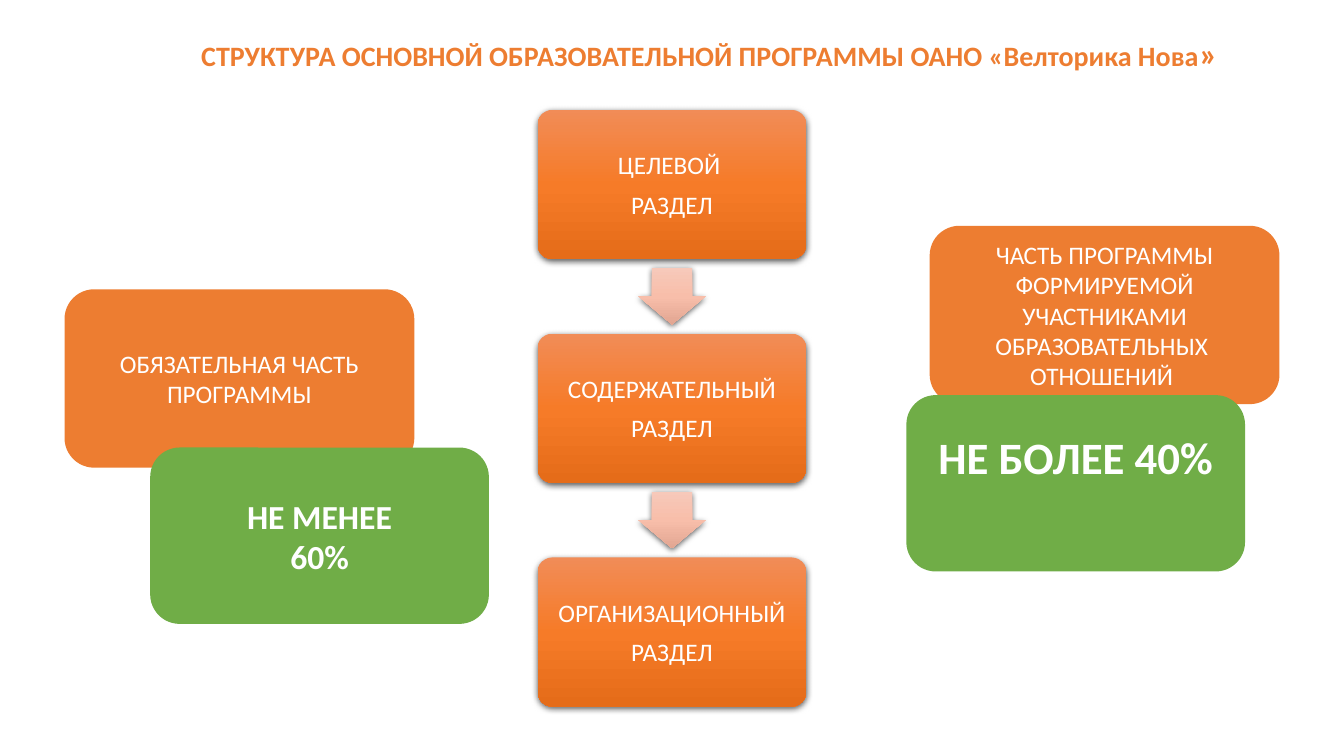
from lxml.etree import SubElement
from pptx import Presentation
from pptx.dml.color import RGBColor
from pptx.enum.shapes import MSO_SHAPE
from pptx.enum.text import MSO_ANCHOR, PP_ALIGN
from pptx.oxml.ns import qn
from pptx.util import Inches, Pt

FONT = "Calibri"
COLORS = {"orange": "ED7D31", "green": "70AD47", "white": "FFFFFF", "shadow": "000000"}
SECTION_GRADIENT = ((0, "F18C57"), (50, "F67B28"), (100, "E56C19"))
ARROW_GRADIENT = ((0, "F7C9BA"), (50, "F8BEAA"), (100, "E2A692"))

TITLE = (("СТРУКТУРА ОСНОВНОЙ ОБРАЗОВАТЕЛЬНОЙ ПРОГРАММЫ ОАНО «Велторика Нова", 20), ("»", 24))
SECTIONS = ("ЦЕЛЕВОЙ \nРАЗДЕЛ", "СОДЕРЖАТЕЛЬНЫЙ\nРАЗДЕЛ", "ОРГАНИЗАЦИОННЫЙ\nРАЗДЕЛ")

# Boxes are left, top, width, height in percent of the slide.
TITLE_BOX = (9.75, 3.73, 86.05, 6.67)
SECTION_TOP, SECTION_PITCH = 14.53, 29.6
SECTION_WIDTH, SECTION_HEIGHT = 20, 19.73
ARROW_WIDTH, ARROW_HEIGHT = 5, 7.47
PART_SIZE, SHARE_SIZE = (26.03, 23.6), (25.2, 23.33)

# Text, left and top, size, colour, font size, bold, bottom inset in inches
CARDS = (
    ("ОБЯЗАТЕЛЬНАЯ ЧАСТЬ ПРОГРАММЫ", (4.8, 38.27), PART_SIZE, "orange", 18, False, 0.05),
    ("ЧАСТЬ ПРОГРАММЫ ФОРМИРУЕМОЙ УЧАСТНИКАМИ ОБРАЗОВАТЕЛЬНЫХ \nОТНОШЕНИЙ ",
     (69.17, 29.87), PART_SIZE, "orange", 18, False, 0.05),
    ("НЕ МЕНЕЕ\n60%", (11.18, 59.2), SHARE_SIZE, "green", 24, True, 0.05),
    ("НЕ БОЛЕЕ 40%", (67.44, 52.27), SHARE_SIZE, "green", 32, True, 0.58),
)

presentation = Presentation()
presentation.slide_width, presentation.slide_height = Inches(13.33), Inches(7.5)
slide = presentation.slides.add_slide(presentation.slide_layouts[6])


def place(box):
    """Turn percent of the slide into lengths."""
    sides = (presentation.slide_width, presentation.slide_height) * 2
    return [round(side * share / 100) for side, share in zip(sides, box)]


def add_shape(kind, box):
    shape = slide.shapes.add_shape(kind, *place(box))
    shape.shadow.inherit = False
    shape.line.fill.background()
    return shape


def add_gradient_and_shadow(shape, stops):
    shape.fill.gradient()
    shape.fill.gradient_angle = 270
    properties = shape._element.spPr
    stop_list = properties.find(".//" + qn("a:gsLst"))
    for old_stop in list(stop_list):
        stop_list.remove(old_stop)
    for position, color in stops:
        stop = SubElement(stop_list, qn("a:gs"), pos=str(position * 1000))
        SubElement(stop, qn("a:srgbClr"), val=color)
    shadow = SubElement(properties.find(qn("a:effectLst")), qn("a:outerShdw"),
                        blurRad=str(Pt(4.5)), dist=str(Pt(1.5)), dir="5400000",
                        algn="ctr", rotWithShape="0")
    shadow_color = SubElement(shadow, qn("a:srgbClr"), val=COLORS["shadow"])
    SubElement(shadow_color, qn("a:alpha"), val="63000")


def format_run(run, size, color, bold):
    run.font.name, run.font.size, run.font.bold = FONT, Pt(size), bold
    run.font.color.rgb = RGBColor.from_string(COLORS[color])


def write(shape, text, size, bold=False, space_after=0):
    frame = shape.text_frame
    frame.text = text
    frame.word_wrap = True
    frame.vertical_anchor = MSO_ANCHOR.MIDDLE
    for paragraph in frame.paragraphs:
        paragraph.alignment = PP_ALIGN.CENTER
        paragraph.space_after = Pt(space_after)
        for run in paragraph.runs:
            format_run(run, size, "white", bold)


for index, text in enumerate(SECTIONS):
    top = SECTION_TOP + index * SECTION_PITCH
    section = add_shape(MSO_SHAPE.ROUNDED_RECTANGLE,
                        (50 - SECTION_WIDTH / 2, top, SECTION_WIDTH, SECTION_HEIGHT))
    section.adjustments[0] = 0.1
    add_gradient_and_shadow(section, SECTION_GRADIENT)
    write(section, text, 18, space_after=6.3)
    if index < len(SECTIONS) - 1:
        gap_middle = top + (SECTION_HEIGHT + SECTION_PITCH) / 2
        arrow = add_shape(MSO_SHAPE.DOWN_ARROW,
                          (50 - ARROW_WIDTH / 2, gap_middle - ARROW_HEIGHT / 2,
                           ARROW_WIDTH, ARROW_HEIGHT))
        arrow.adjustments[0], arrow.adjustments[1] = 0.6, 0.5
        add_gradient_and_shadow(arrow, ARROW_GRADIENT)

title = slide.shapes.add_textbox(*place(TITLE_BOX))
title.text_frame.word_wrap = True
title_paragraph = title.text_frame.paragraphs[0]
title_paragraph.alignment = PP_ALIGN.CENTER
for text, size in TITLE:
    title_run = title_paragraph.add_run()
    title_run.text = text
    format_run(title_run, size, "orange", True)

for text, corner, box_size, color, size, bold, bottom_inset in CARDS:
    card = add_shape(MSO_SHAPE.FLOWCHART_ALTERNATE_PROCESS, corner + box_size)
    card.fill.solid()
    card.fill.fore_color.rgb = RGBColor.from_string(COLORS[color])
    write(card, text, size, bold)
    card.text_frame.margin_bottom = Inches(bottom_inset)

presentation.save("out.pptx")
